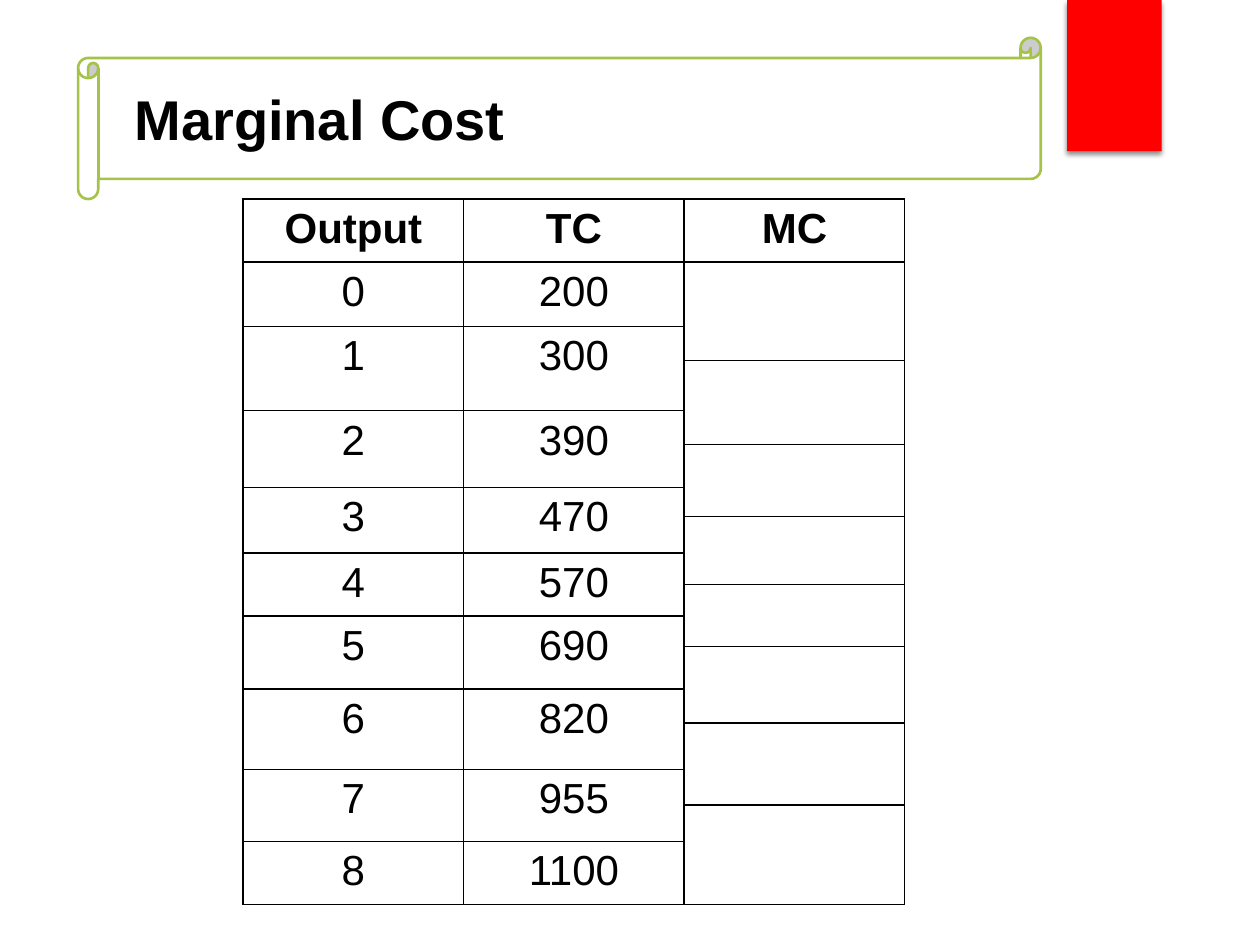
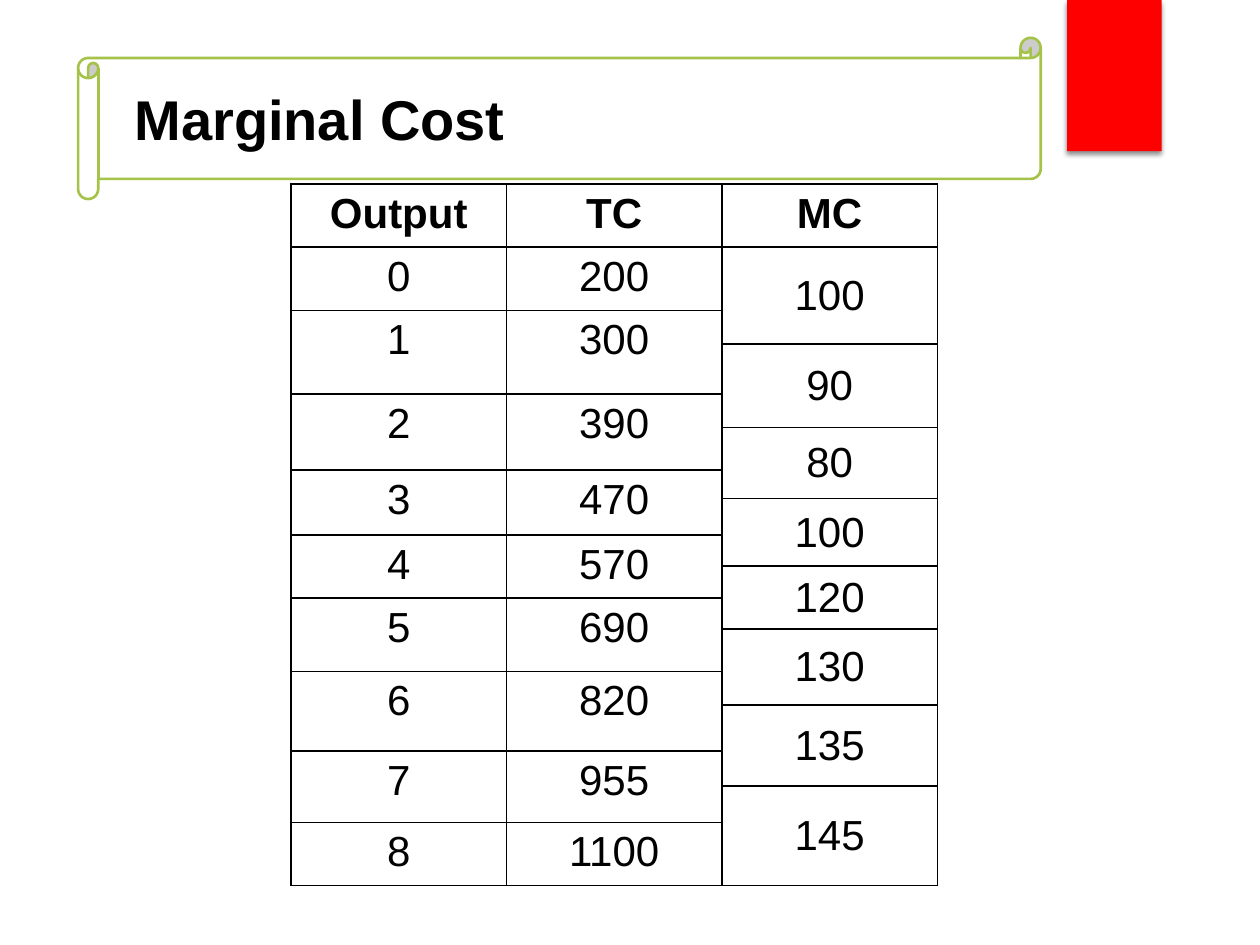
from dataclasses import dataclass

from lxml.etree import SubElement
from pptx import Presentation
from pptx.dml.color import RGBColor as Color
from pptx.enum.shapes import MSO_SHAPE as Shape
from pptx.enum.text import MSO_ANCHOR as Anchor, PP_ALIGN as Align
from pptx.oxml import parse_xml
from pptx.oxml.ns import nsdecls, qn
from pptx.util import Inches, Pt


@dataclass(frozen=True)
class Theme:
    font: str = "Arial"
    ink: str = "000000"
    paper: str = "FFFFFF"
    scroll_line: str = "A5C249"
    ribbon: str = "FF0000"
    title_size: int = 32
    table_size: int = 24
    scroll_width: float = 1.5
    border_width: float = 1
    title_outline: float = 0.75


THEME = Theme()
HEADINGS = ("Output", "TC", "MC")
TOTAL_COSTS = (200, 300, 390, 470, 570, 690, 820, 955, 1100)
ROW_HEIGHTS = (0.47, 0.51, 0.27, 0.4, 0.27, 0.34, 0.23, 0.29, 0.25,
               0.25, 0.24, 0.34, 0.27, 0.37, 0.28, 0.29, 0.47)


def line_xml(tag, color, width):
    return parse_xml(
        f'<a:{tag} {nsdecls("a")} w="{Pt(width)}"><a:solidFill>'
        f'<a:srgbClr val="{color}"/></a:solidFill></a:{tag}>')


def write(frame, text, size, bold=False, align=Align.LEFT):
    para = frame.paragraphs[0]
    para.alignment = align
    span = para.add_run()
    span.text = str(text)
    formats = {"name": THEME.font, "size": Pt(size), "bold": bold}
    for name, value in formats.items():
        setattr(span.font, name, value)
    span.font.color.rgb = Color.from_string(THEME.ink)
    return span


def add_block(page, kind, place, fill, line=None):
    block = page.shapes.add_shape(kind, *map(Inches, place))
    block.shadow.inherit = False
    block.fill.solid()
    block.fill.fore_color.rgb = Color.from_string(fill)
    if line:
        block.line.color.rgb = Color.from_string(line)
        block.line.width = Pt(THEME.scroll_width)
    else:
        block.line.fill.background()
    return block


def add_drop_shadow(block):
    effects = block._element.spPr.find(qn("a:effectLst"))
    shadow = SubElement(effects, qn("a:outerShdw"), blurRad=str(Pt(3)),
                        dist=str(Pt(2)), dir="5400000", rotWithShape="0")
    color = SubElement(shadow, qn("a:srgbClr"), val=THEME.ink)
    SubElement(color, qn("a:alpha"), val="45000")


def add_title(page, text):
    box = page.shapes.add_textbox(*map(Inches, (0.97, 0.55, 6.94, 0.78)))
    box.text_frame.word_wrap = True
    box.text_frame.vertical_anchor = Anchor.MIDDLE
    span = write(box.text_frame, text, THEME.title_size, bold=True)
    outline = line_xml("ln", THEME.paper, THEME.title_outline)
    span.font._element.insert(0, outline)


def add_page(deck, title):
    page = deck.slides.add_slide(deck.slide_layouts[6])
    add_block(page, Shape.HORIZONTAL_SCROLL, (0.62, 0.3, 7.64, 1.28),
              THEME.paper, THEME.scroll_line)
    add_drop_shadow(add_block(page, Shape.RECTANGLE, (8.47, 0, 0.75, 1.2),
                              THEME.ribbon))
    add_title(page, title)
    return page


def style_cell(cell):
    cell.fill.background()
    properties = cell._tc.get_or_add_tcPr()
    for index, side in enumerate(("lnL", "lnR", "lnT", "lnB")):
        properties.insert(index, line_xml(side, THEME.ink, THEME.border_width))


def fill_span(table, column, first, last, text):
    """Merge rows first to last of one column and write the text there."""
    cell = table.cell(first, column)
    if last > first:
        cell.merge(table.cell(last, column))
    if text is not None:
        write(cell.text_frame, text, THEME.table_size, align=Align.CENTER)
    return cell


def add_cost_table(page, left, top, column_width, scale=1, show_marginal=False):
    """Draw the costs, with each marginal cost midway between two outputs."""
    heights = [height * scale for height in ROW_HEIGHTS]
    size = (column_width * len(HEADINGS), sum(heights))
    table = page.shapes.add_table(len(heights), len(HEADINGS),
                                  *map(Inches, (left, top, *size))).table
    table.first_row = table.horz_banding = False
    for column in table.columns:
        column.width = Inches(column_width)
    for row, height in zip(table.rows, heights):
        row.height = Inches(height)
    for cell in table.iter_cells():
        style_cell(cell)

    for column, heading in enumerate(HEADINGS):
        write(table.cell(0, column).text_frame, heading, THEME.table_size,
              bold=True, align=Align.CENTER)

    last_row = len(heights) - 1
    for output, cost in enumerate(TOTAL_COSTS):
        first, last = max(1, 2 * output), min(2 * output + 1, last_row)
        for column, value in enumerate((output, cost)):
            fill_span(table, column, first, last, value)
    for step, (before, after) in enumerate(zip(TOTAL_COSTS, TOTAL_COSTS[1:])):
        first = 2 * step + 1
        marginal = after - before if show_marginal else None
        cell = fill_span(table, 2, first, first + 1, marginal)
        cell.vertical_anchor = Anchor.MIDDLE


def main():
    deck = Presentation()
    deck.slide_width, deck.slide_height = Inches(10), Inches(7.5)
    title = "Marginal Cost"
    add_cost_table(add_page(deck, title), 1.93, 1.58, 1.75)
    add_cost_table(add_page(deck, title), 2.31, 1.46, 1.71,
                   scale=0.99, show_marginal=True)
    deck.save("out.pptx")


if __name__ == "__main__":
    main()
